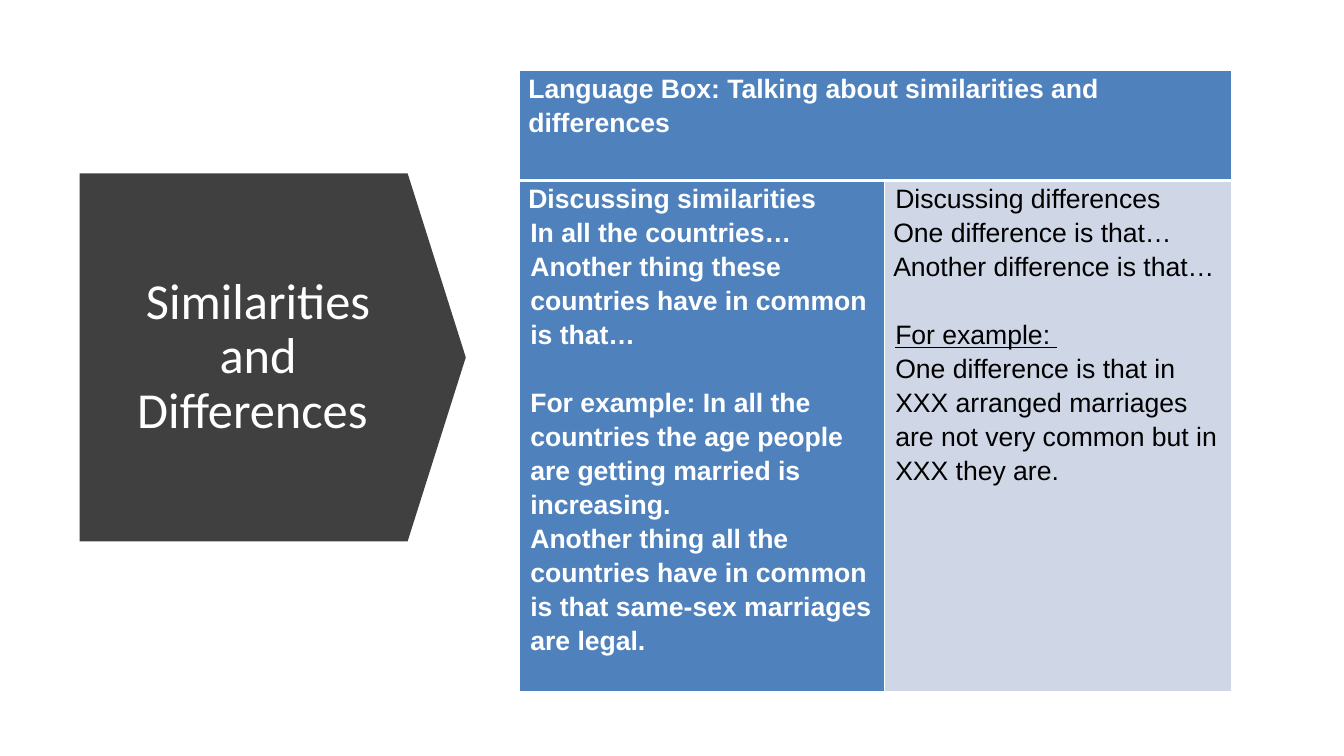
from lxml.etree import SubElement
from pptx import Presentation
from pptx.dml.color import RGBColor
from pptx.enum.shapes import MSO_SHAPE as Shape
from pptx.enum.text import MSO_ANCHOR as Anchor, PP_ALIGN as Align
from pptx.oxml.ns import qn
from pptx.util import Inches, Pt

WHITE, BLACK, CHARCOAL = "FFFFFF", "000000", "404040"
BLUE, PALE_BLUE = "4F81BD", "CFD7E7"
INDENT, GAP = 0.02, 24.3

HEADING = [("Language Box: Talking about similarities and differences", 0, 0)]
SIMILARITIES = [
    ("Discussing similarities", 0, 0),
    ("In all the countries…", INDENT, 0),
    ("Another thing these countries have in common is that…", INDENT, 0),
    ("For example: In all the countries the age people are getting married "
     "is increasing.", INDENT, GAP),
    ("Another thing all the countries have in common is that same-sex "
     "marriages are legal.", INDENT, 0),
]
DIFFERENCES = [
    ("Discussing differences", INDENT, 0),
    ("One difference is that…", 0, 0),
    ("Another difference is that…", 0, 0),
    ("For example: ", INDENT, GAP),
    ("One difference is that in XXX arranged marriages are not very common "
     "but in XXX they are.", INDENT, 0),
]


def color(value):
    """Turn a hex string into a colour."""
    return RGBColor.from_string(value)


def style_font(font, name, size, tint, bold=False):
    """Set the face, size, colour and weight of a font."""
    font.name, font.size, font.bold = name, Pt(size), bold
    font.color.rgb = color(tint)


def add_title_arrow(page, left, top, width, height):
    """Draw the right-pointing block and its title inside the given box."""
    arrow = page.shapes.add_shape(
        Shape.DOWN_ARROW, Inches(left + (width - height) / 2),
        Inches(top + (height - width) / 2), Inches(height), Inches(width))
    arrow.rotation = 270
    arrow.adjustments[0], arrow.adjustments[1] = 1, 0.158
    arrow.shadow.inherit = False
    arrow.fill.solid()
    arrow.fill.fore_color.rgb = color(CHARCOAL)
    arrow.line.fill.background()

    title = page.shapes.add_textbox(Inches(left + 0.33), Inches(top + 0.43),
                                    Inches(2.88), Inches(2.79))
    frame = title.text_frame
    frame.word_wrap = True
    frame.vertical_anchor = Anchor.MIDDLE
    para = frame.paragraphs[0]
    para.text = "Similarities and Differences "
    para.alignment = Align.CENTER
    para.line_spacing = 0.9
    style_font(para.font, "Calibri", 36, WHITE)


def add_borders(cell, widths):
    """Give a cell white borders of the given widths in points."""
    properties = cell._tc.get_or_add_tcPr()
    for place, (side, width) in enumerate(widths.items()):
        line = SubElement(properties, qn(f"a:ln{side}"), w=str(Pt(width)))
        fill = SubElement(line, qn("a:solidFill"))
        SubElement(fill, qn("a:srgbClr"), val=WHITE)
        properties.insert(place, line)


def fill_cell(cell, lines, fill, tint, bold):
    """Write lines of text, indent and space before into a coloured cell."""
    cell.fill.solid()
    cell.fill.fore_color.rgb = color(fill)
    cell.margin_left = cell.margin_right = Inches(0.09)
    cell.margin_top = cell.margin_bottom = 0
    frame = cell.text_frame
    for number, (text, indent, gap) in enumerate(lines):
        para = frame.add_paragraph() if number else frame.paragraphs[0]
        para.text = text
        para.line_spacing = 1.15
        para.space_before = Pt(gap)
        para._p.get_or_add_pPr().set("marL", str(Inches(indent)))
        style_font(para.font, "Arial", 19, tint, bold)
        para.font.underline = text == "For example: "


def add_language_box(page, left, top, width, height):
    """Build the table of phrases inside the given box."""
    table = page.shapes.add_table(2, 2, Inches(left), Inches(top),
                                  Inches(width), Inches(height)).table
    first_column, first_row = 3.62, 1.09
    table.columns[0].width = Inches(first_column)
    table.columns[1].width = Inches(width - first_column)
    table.rows[0].height = Inches(first_row)
    table.rows[1].height = Inches(height - first_row)
    table.cell(0, 0).merge(table.cell(0, 1))
    fill_cell(table.cell(0, 0), HEADING, BLUE, WHITE, True)
    fill_cell(table.cell(1, 0), SIMILARITIES, BLUE, WHITE, True)
    fill_cell(table.cell(1, 1), DIFFERENCES, PALE_BLUE, BLACK, False)
    for column in range(2):
        add_borders(table.cell(0, column), {"L": 1, "R": 1, "T": 1, "B": 3})
        add_borders(table.cell(1, column), {"L": 1, "R": 1, "T": 3, "B": 1})


def main():
    """Build the slide and save it."""
    deck = Presentation()
    deck.slide_width, deck.slide_height = Inches(13.33), Inches(7.5)
    page = deck.slides.add_slide(deck.slide_layouts[6])
    add_title_arrow(page, 0.79, 1.72, 3.83, 3.65)
    add_language_box(page, 5.15, 0.7, 7.07, 6.09)
    deck.save("out.pptx")


if __name__ == "__main__":
    main()
